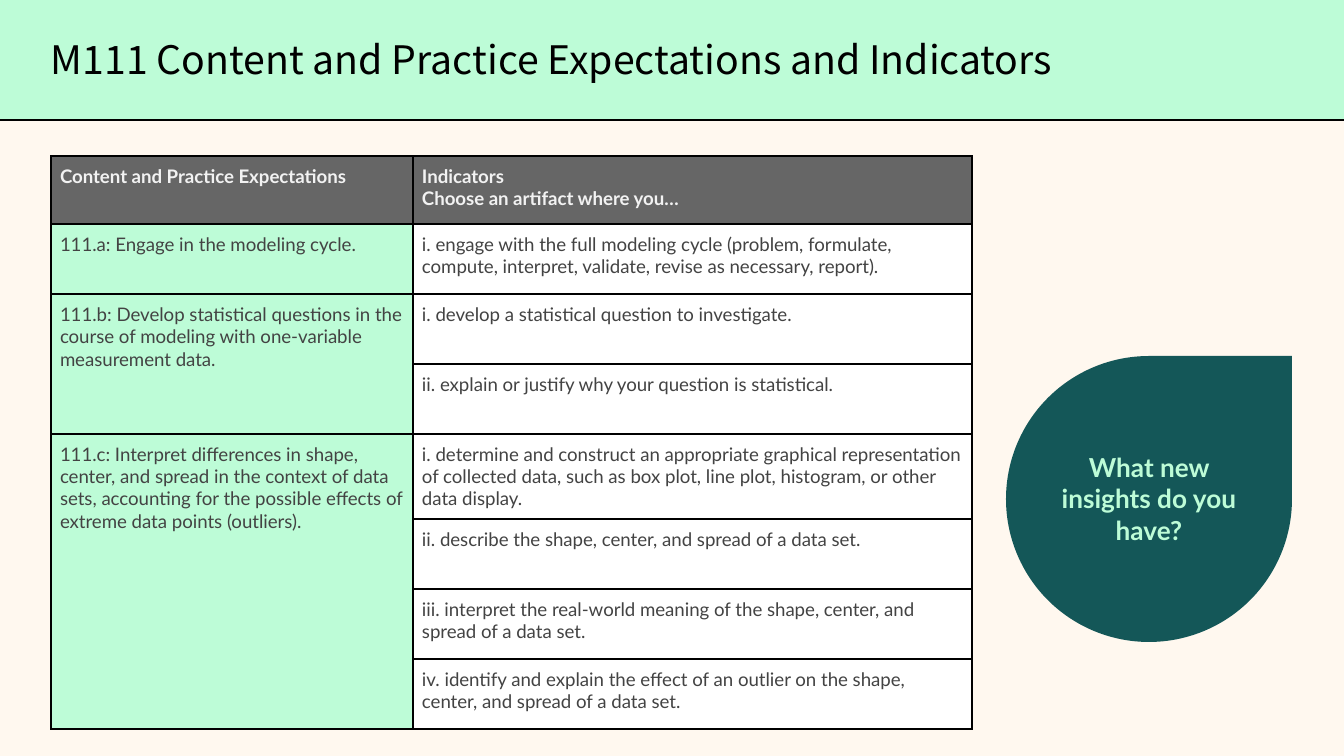
import pptx
import pptx.util
import pptx.dml.color
import pptx.enum.shapes
import pptx.enum.text
import pptx.oxml
import pptx.oxml.ns
import lxml.etree

PX = 914400 / 134.4
COLORS = {"cream": "FFF8EF", "mint": "BDFCD7", "teal": "145758", "black": "000000",
          "header": "666666", "header_text": "F2F2F2", "body": "434343", "white": "FFFFFF"}
SHAPES = pptx.enum.shapes.MSO_SHAPE
ANCHOR = pptx.enum.text.MSO_ANCHOR
ALIGN = pptx.enum.text.PP_ALIGN

HEADINGS = ["Content and Practice Expectations", "Indicators\nChoose an artifact where you…"]
EXPECTATIONS = [
    ("111.a: Engage in the modeling cycle.", [
        "i. engage with the full modeling cycle (problem, formulate, compute, interpret, "
        "validate, revise as necessary, report)."]),
    ("111.b: Develop statistical questions in the course of modeling with one-variable "
     "measurement data.", [
         "i. develop a statistical question to investigate.",
         "ii. explain or justify why your question is statistical."]),
    ("111.c: Interpret differences in shape, center, and spread in the context of data sets, "
     "accounting for the possible effects of extreme data points (outliers).", [
         "i. determine and construct an appropriate graphical representation of collected data, "
         "such as box plot, line plot, histogram, or other data display.",
         "ii. describe the shape, center, and spread of a data set.",
         "iii. interpret the real-world meaning of the shape, center, and spread of a data set.",
         "iv. identify and explain the effect of an outlier on the shape, center, and spread "
         "of a data set."]),
]


def px(n):
    return pptx.util.Emu(round(n * PX))


def rgb(name):
    return pptx.dml.color.RGBColor.from_string(COLORS[name])


def fill(obj, color):
    obj.fill.solid()
    obj.fill.fore_color.rgb = rgb(color)


def add_shape(s, kind, x, y, w, h, color):
    sp = s.shapes.add_shape(kind, px(x), px(y), px(w), px(h))
    sp.shadow.inherit = False
    fill(sp, color)
    sp.line.fill.background()


def write(tf, text, size, color, font="Lato", bold=False, align=ALIGN.LEFT, spacing=None):
    for i, line in enumerate(text.split("\n")):
        p = tf.paragraphs[0] if i == 0 else tf.add_paragraph()
        p.alignment = align
        p.line_spacing = spacing
        r = p.add_run()
        r.text = line
        r.font.size = pptx.util.Pt(size)
        r.font.name = font
        r.font.bold = bold
        r.font.color.rgb = rgb(color)
        # The same face for East Asian text
        ea = lxml.etree.SubElement(r.font._element, pptx.oxml.ns.qn("a:ea"))
        ea.set("typeface", font)


def add_text(s, x, y, w, h, text, size, color, **style):
    tf = s.shapes.add_textbox(px(x), px(y), px(w), px(h)).text_frame
    tf.word_wrap = True
    tf.margin_left = tf.margin_right = tf.margin_top = tf.margin_bottom = 0
    tf.vertical_anchor = ANCHOR.MIDDLE
    write(tf, text, size, color, **style)


def add_title_band(s, x, y, w, h):
    add_shape(s, SHAPES.RECTANGLE, x, y, w, h, "mint")
    add_text(s, x + 51, y + 40, w - 91, 43,
             "M111 Content and Practice Expectations and Indicators",
             21, "black", font="Noto Sans CJK KR", spacing=0.9)
    # Rule under the band
    rule = s.shapes.add_connector(pptx.enum.shapes.MSO_CONNECTOR.STRAIGHT,
                                  px(x + w), px(y + h), px(x), px(y + h))
    rule.line.color.rgb = rgb("black")
    rule.line.width = pptx.util.Pt(0.75)
    lxml.etree.SubElement(rule._element.spPr, pptx.oxml.ns.qn("a:effectLst"))


def add_callout(s, x, y, size):
    add_shape(s, SHAPES.TEAR, x, y, size, size, "teal")
    add_text(s, x + 41, y + 95, size - 82, 95, "What new insights do you have?",
             14, "mint", bold=True, align=ALIGN.CENTER)


def set_borders(cell):
    tcPr = cell._tc.get_or_add_tcPr()
    for i, side in enumerate(("lnL", "lnR", "lnT", "lnB")):
        tcPr.insert(i, pptx.oxml.parse_xml(
            f'<a:{side} {pptx.oxml.ns.nsdecls("a")} w="12700"><a:solidFill>'
            f'<a:srgbClr val="{COLORS["black"]}"/></a:solidFill></a:{side}>'))


def fill_cell(cell, text, color, text_color="body", bold=False):
    cell.margin_left = cell.margin_right = cell.margin_top = cell.margin_bottom = px(9)
    write(cell.text_frame, text, 10, text_color, bold=bold)
    fill(cell, color)


def add_expectations_table(s, x, y, col_widths, header_h, row_h):
    count = sum(len(indicators) for _, indicators in EXPECTATIONS)
    table = s.shapes.add_table(count + 1, 2, px(x), px(y), px(sum(col_widths)),
                               px(header_h + count * row_h)).table
    for col, w in zip(table.columns, col_widths):
        col.width = px(w)
    for i, row in enumerate(table.rows):
        row.height = px(row_h if i else header_h)

    # Header row
    for c, heading in enumerate(HEADINGS):
        fill_cell(table.cell(0, c), heading, "header", "header_text", bold=True)

    # One merged expectation beside its indicators
    top = 1
    for expectation, indicators in EXPECTATIONS:
        end = top + len(indicators)
        if len(indicators) > 1:
            table.cell(top, 0).merge(table.cell(end - 1, 0))
        fill_cell(table.cell(top, 0), expectation, "mint")
        for r, indicator in enumerate(indicators, top):
            fill_cell(table.cell(r, 1), indicator, "white")
            fill(table.cell(r, 0), "mint")
        top = end
    for cell in table.iter_cells():
        set_borders(cell)


def main():
    prs = pptx.Presentation()
    prs.slide_width, prs.slide_height = px(1344), px(756)
    s = prs.slides.add_slide(prs.slide_layouts[6])
    fill(s.background, "cream")
    add_title_band(s, 0, 0, 1344, 120)
    add_callout(s, 1006, 356, 286)
    add_expectations_table(s, 51, 156, (362, 559), 68, 70)
    prs.save("out.pptx")


if __name__ == "__main__":
    main()
